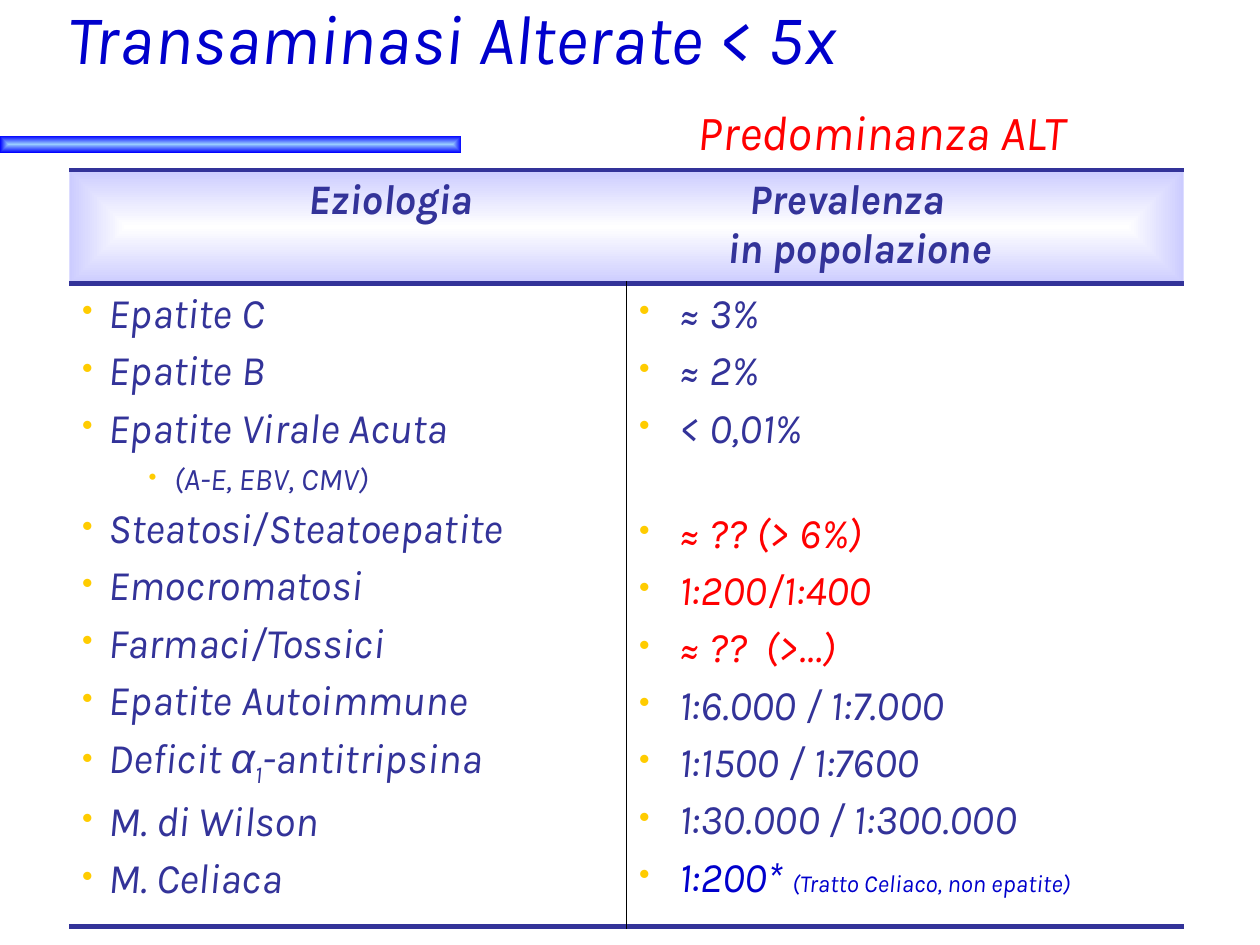
from dataclasses import dataclass

from pptx import Presentation
from pptx import util as u
from pptx.dml.color import RGBColor
from pptx.enum import shapes, text
from pptx.oxml import parse_xml
from pptx.oxml.ns import nsdecls

COLORS = {
    "title": "0000CC", "alert": "FF0000", "body": "333399", "bullet": "FFCC00",
    "bar_core": "99CCFF", "bar_edge": "0000FF",
    "head_core": "FFFFFF", "head_edge": "CCCCFF", "divider": "000000",
}
NS = nsdecls("a")


@dataclass(frozen=True)
class Phrase:
    words: str
    size: float = 24
    color: str = "body"
    font: str = "Karla"
    baseline: int = 0


@dataclass(frozen=True)
class Entry:
    phrases: tuple[Phrase, ...]
    margin: float
    hanging: float
    after: float = 4.8


def cause(*phrases: Phrase) -> Entry:
    return Entry(phrases, 0.53, 0.53)


def rate(*phrases: Phrase, after: float = 4.8) -> Entry:
    return Entry(phrases, 0.81, 0.81, after)


CAUSES = [
    cause(Phrase("Epatite C")),
    cause(Phrase("Epatite B")),
    cause(Phrase("Epatite Virale Acuta")),
    Entry((Phrase("(A-E, EBV, CMV)", size=18),), 1.85, 0.51, 3.6),
    cause(Phrase("Steatosi/Steatoepatite")),
    cause(Phrase("Emocromatosi")),
    cause(Phrase("Farmaci/Tossici")),
    cause(Phrase("Epatite Autoimmune")),
    cause(Phrase("Deficit "), Phrase("α", font="Arial"), Phrase("1", baseline=-25000),
          Phrase("-antitripsina")),
    cause(Phrase("M. di Wilson")),
    cause(Phrase("M. Celiaca")),
]
RATES = [
    rate(Phrase("≈ 3%")),
    rate(Phrase("≈ 2%")),
    rate(Phrase("< 0,01%"), after=32),
    rate(Phrase("≈ ?? (> 6%)", color="alert")),
    rate(Phrase("1:200/1:400", color="alert")),
    rate(Phrase("≈ ??  (>…)", color="alert")),
    rate(Phrase("1:6.000 / 1:7.000")),
    rate(Phrase("1:1500 / 1:7600")),
    rate(Phrase("1:30.000 / 1:300.000")),
    rate(Phrase("1:200* ", color="title"),
         Phrase("(Tratto Celiaco, non epatite)", size=14, color="title")),
]


def add_text(paragraph, words: str, *, size: float = 24, color: str = "body",
             font: str = "Karla", bold: bool = False, baseline: int = 0) -> None:
    run = paragraph.add_run()
    run.text = words
    run.font.size = u.Pt(size)
    run.font.name = font
    run.font.bold = bold
    run.font.italic = True
    run.font.color.rgb = RGBColor.from_string(COLORS[color])
    if baseline:
        run.font._element.set("baseline", str(baseline))


def solid(color: str) -> str:
    return f'<a:srgbClr val="{COLORS[color]}"/>'


def frame_gradient(core: str, edge: str):
    return parse_xml(
        f'<a:gradFill {NS} rotWithShape="1"><a:gsLst>'
        f'<a:gs pos="0">{solid(core)}</a:gs><a:gs pos="100000">{solid(edge)}</a:gs>'
        '</a:gsLst><a:path path="shape"><a:fillToRect l="50000" t="50000" '
        'r="50000" b="50000"/></a:path></a:gradFill>')


def set_borders(cell, **sides: tuple[str, float]) -> None:
    properties = cell._tc.get_or_add_tcPr()
    for place, side in enumerate("LRTB"):
        color, width = sides.get(side, ("", 0))
        paint = f"<a:solidFill>{solid(color)}</a:solidFill>" if color else "<a:noFill/>"
        properties.insert(place, parse_xml(
            f'<a:ln{side} {NS} w="{int(u.Pt(width))}">{paint}</a:ln{side}>'))


def fill_entries(cell, entries: list[Entry]) -> None:
    frame = cell.text_frame
    for number, entry in enumerate(entries):
        paragraph = frame.add_paragraph() if number else frame.paragraphs[0]
        paragraph.space_after = u.Pt(entry.after)
        properties = paragraph._p.get_or_add_pPr()
        properties.set("marL", str(int(u.Cm(entry.margin))))
        properties.set("indent", str(-int(u.Cm(entry.hanging))))
        for bullet in (f'<a:buClr {NS}>{solid("bullet")}</a:buClr>',
                       f'<a:buSzPct {NS} val="75000"/>',
                       f'<a:buChar {NS} char="•"/>'):
            properties.append(parse_xml(bullet))
        for phrase in entry.phrases:
            add_text(paragraph, phrase.words, size=phrase.size, color=phrase.color,
                     font=phrase.font, baseline=phrase.baseline)


def fill_heading(paragraph, words: str, centers: list[float]) -> None:
    stops = "".join(f'<a:tab pos="{int(u.Cm(center))}" algn="ctr"/>' for center in centers)
    paragraph._p.get_or_add_pPr().append(parse_xml(f"<a:tabLst {NS}>{stops}</a:tabLst>"))
    add_text(paragraph, words, bold=True)


def draw_bar(slide) -> None:
    bar = slide.shapes.add_shape(shapes.MSO_SHAPE.RECTANGLE,
                                 u.Cm(0), u.Cm(2.74), u.Cm(9.3), u.Cm(0.34))
    bar.shadow.inherit = False
    bar.line.fill.background()
    bar._element.spPr.find(".//{*}prstGeom").addnext(frame_gradient("bar_core", "bar_edge"))


def draw_title(slide) -> None:
    frame = slide.shapes.add_textbox(u.Cm(1.12), u.Cm(0), u.Cm(23.2), u.Cm(3.35)).text_frame
    frame.word_wrap = True
    frame.margin_top = 0
    frame.vertical_anchor = text.MSO_ANCHOR.BOTTOM
    add_text(frame.paragraphs[0], "Transaminasi Alterate < 5x", size=40, color="title")
    predominance = frame.add_paragraph()
    predominance.space_before = u.Pt(12.8)
    predominance._p.get_or_add_pPr().set("marL", str(int(u.Cm(12.7))))
    add_text(predominance, "Predominanza ALT", size=28, color="alert")


def draw_table(slide) -> None:
    table = slide.shapes.add_table(2, 2, u.Cm(1.4), u.Cm(3.43), u.Cm(22.46), u.Cm(14.85)).table
    table.first_row = table.horz_banding = False
    for column in table.columns:
        column.width = u.Cm(11.23)
    for row, height in zip(table.rows, (2.22, 12.63)):
        row.height = u.Cm(height)

    rule, divider = ("body", 3), ("divider", 1)
    heading, heading_end = table.rows[0].cells
    heading.merge(heading_end)
    for cell in (heading, heading_end):
        cell._tc.get_or_add_tcPr().append(frame_gradient("head_core", "head_edge"))
        set_borders(cell, T=rule, B=rule)
    fill_heading(heading.text_frame.paragraphs[0], "\tEziologia\tPrevalenza", [6.22, 15.42])
    fill_heading(heading.text_frame.add_paragraph(), "\tin popolazione", [15.67])

    causes, rates = table.rows[1].cells
    for cell, entries, inner in ((causes, CAUSES, "R"), (rates, RATES, "L")):
        cell.fill.background()
        set_borders(cell, T=rule, B=rule, **{inner: divider})
        fill_entries(cell, entries)


def main() -> None:
    deck = Presentation()
    deck.slide_width, deck.slide_height = u.Cm(25.4), u.Cm(19.05)
    slide = deck.slides.add_slide(deck.slide_layouts[6])
    draw_bar(slide)
    draw_title(slide)
    draw_table(slide)
    deck.save("out.pptx")


if __name__ == "__main__":
    main()
